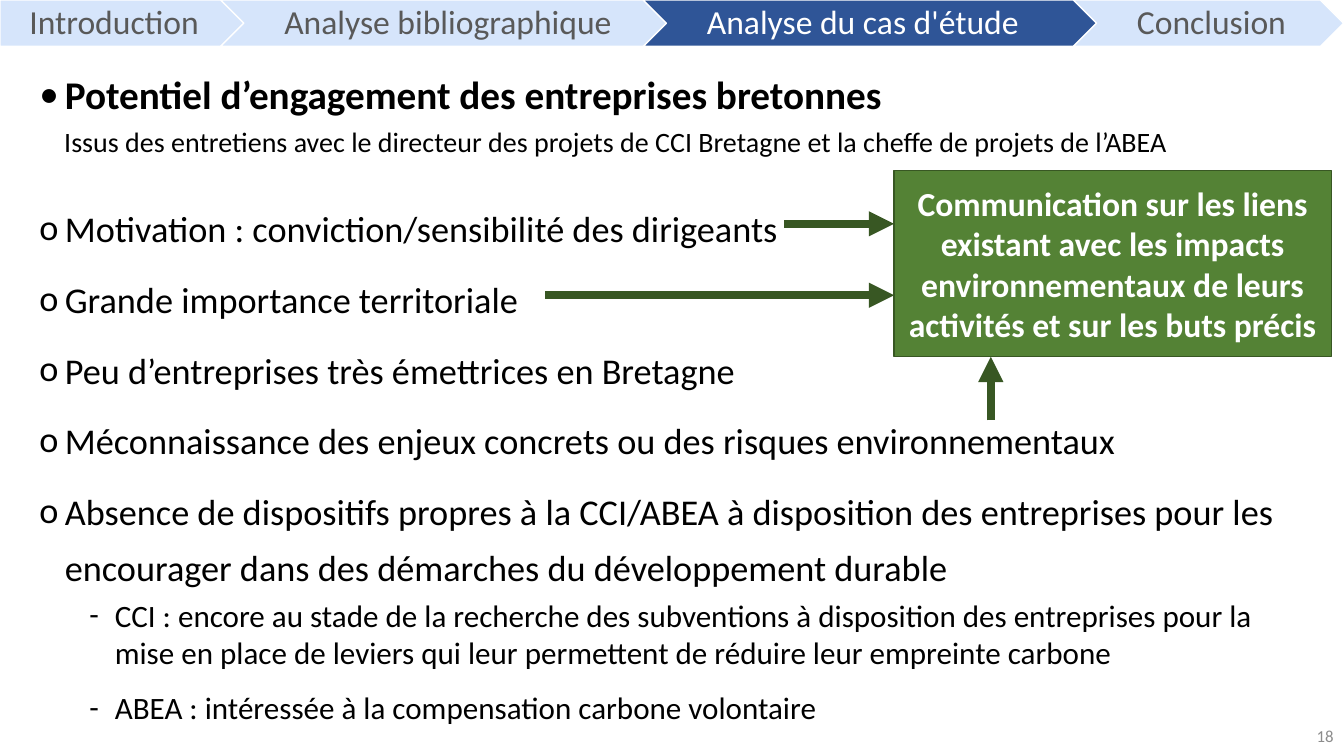
from lxml import etree
from pptx import Presentation
from pptx.dml.color import RGBColor
from pptx.enum.shapes import MSO_CONNECTOR, MSO_SHAPE
from pptx.enum.text import MSO_ANCHOR, MSO_AUTO_SIZE, PP_ALIGN
from pptx.oxml.ns import qn
from pptx.util import Cm, Pt

LEFT, MID, RIGHT = PP_ALIGN.LEFT, PP_ALIGN.CENTER, PP_ALIGN.RIGHT
TOP, CENTER = MSO_ANCHOR.TOP, MSO_ANCHOR.MIDDLE
RECT, PLATE, CHEVRON = MSO_SHAPE.RECTANGLE, MSO_SHAPE.PENTAGON, MSO_SHAPE.CHEVRON
STRAIGHT = MSO_CONNECTOR.STRAIGHT
FIXED = MSO_AUTO_SIZE.NONE

BLACK, WHITE, GREY, PALE = "000000", "FFFFFF", "595959", "8C8C8C"
LIGHT, NAVY, GREEN, DARK = "D6E5FB", "2F5597", "548235", "385723"


def color(code):
    return RGBColor.from_string(code)


def apply(target, values):
    for name, value in values.items():
        setattr(target, name, value)


class Deck:
    """Holds the style and the current slide."""

    font = "Calibri"
    hang = 0.64

    def __init__(self, width, height):
        self.prs = Presentation()
        apply(self.prs, {"slide_width": Cm(width), "slide_height": Cm(height)})
        self.slide = self.prs.slides.add_slide(self.prs.slide_layouts[1])

    def place(self, item, box):
        names = ("left", "top", "width", "height")
        apply(item, dict(zip(names, map(Cm, box))))

    def frame(self, item, anchor=TOP, **margins):
        frame = item.text_frame
        apply(frame, {"word_wrap": True, "auto_size": FIXED,
                      "vertical_anchor": anchor})
        apply(frame, {f"margin_{side}": Cm(gap) for side, gap in margins.items()})
        return frame

    def fill_in(self, para, text, size, tint=BLACK, bold=False, align=LEFT,
                lines=1.0, before=0, level=0):
        apply(para, {"alignment": align, "line_spacing": lines,
                     "space_before": Pt(before), "space_after": Pt(0),
                     "level": level})
        run = para.add_run()
        run.text = text
        apply(run.font, {"name": self.font, "size": Pt(size), "bold": bold})
        run.font.color.rgb = color(tint)

    def bullet(self, para, mark, left):
        props = para._p.get_or_add_pPr()
        props.set("marL", str(Cm(left)))
        props.set("indent", str(Cm(-self.hang)))
        etree.SubElement(props, qn("a:buFont")).set("typeface", self.font)
        etree.SubElement(props, qn("a:buChar")).set("char", mark)

    def title(self, box, text):
        item = self.slide.shapes.title
        self.place(item, box)
        para = self.frame(item).paragraphs[0]
        self.fill_in(para, text, 28, bold=True, lines=0.9, before=10)
        self.bullet(para, "•", self.hang)

    def body(self, box, rows):
        item = self.slide.placeholders[1]
        self.place(item, box)
        frame = self.frame(item)
        for spot, (level, lines, text) in enumerate(rows):
            para = frame.add_paragraph() if spot else frame.paragraphs[0]
            size, before, mark, left = ((25.9, 10, "o", self.hang),
                                        (22.2, 5, "-", 1.9))[level]
            self.fill_in(para, text, size, lines=lines, before=before, level=level)
            self.bullet(para, mark, left)

    def label(self, box, text, size, anchor=TOP, **style):
        item = self.slide.shapes.add_textbox(*map(Cm, box))
        self.fill_in(self.frame(item, anchor).paragraphs[0], text, size, **style)

    def shape(self, kind, box, text, fill, edge, host=None, margins=None, **style):
        item = (host or self.slide).shapes.add_shape(kind, *map(Cm, box))
        item.shadow.inherit = False
        item.fill.solid()
        item.fill.fore_color.rgb = color(fill)
        item.line.color.rgb = color(edge)
        item.line.width = Pt(1)
        para = self.frame(item, CENTER, **(margins or {})).paragraphs[0]
        self.fill_in(para, text, 24, **style)

    def arrow(self, *ends):
        item = self.slide.shapes.add_connector(STRAIGHT, *map(Cm, ends))
        item.line.color.rgb = color(DARK)
        item.line.width = Pt(6)
        props = item._element.spPr
        etree.SubElement(props.find(qn("a:ln")), qn("a:tailEnd")).set("type", "triangle")
        etree.SubElement(props, qn("a:effectLst"))

    def steps(self, height, rows):
        group = self.slide.shapes.add_group_shape()
        for kind, left, width, text, active, align, inset in rows:
            self.shape(kind, (left, 0, width, height), text,
                       NAVY if active else LIGHT, WHITE, host=group,
                       margins={"left": inset, "top": 0.18,
                                "right": 0.1, "bottom": 0.18},
                       tint=WHITE if active else GREY, align=align, lines=0.9)


def main():
    deck = Deck(33.87, 19.05)

    # Findings
    deck.body((0.74, 4.75, 32.26, 14.07), [
        (0, 1.3, "Motivation : conviction/sensibilité des dirigeants"),
        (0, 1.3, "Grande importance territoriale"),
        (0, 1.3, "Peu d’entreprises très émettrices en Bretagne"),
        (0, 1.3, "Méconnaissance des enjeux concrets ou des risques "
                 "environnementaux"),
        (0, 1.3, "Absence de dispositifs propres à la CCI/ABEA à disposition "
                 "des entreprises pour les encourager dans des démarches du "
                 "développement durable"),
        (1, 1.0, "CCI : encore au stade de la recherche des subventions à "
                 "disposition des entreprises pour la mise en place de leviers "
                 "qui leur permettent de réduire leur empreinte carbone"),
        (1, 1.3, "ABEA : intéressée à la compensation carbone volontaire"),
    ])

    # Heading, page number and origin of the findings
    deck.title((0.74, 1.78, 31.75, 1.42),
               "Potentiel d’engagement des entreprises bretonnes")
    deck.label((26.24, 18.03, 7.62, 1.02), "18", 12, CENTER,
               tint=PALE, align=RIGHT)
    deck.label((1.37, 3.1, 28.96, 1.02),
               "Issus des entretiens avec le directeur des projets de CCI "
               "Bretagne et la cheffe de projets de l’ABEA", 20, lines=0.9,
               before=10)

    # Message box and the arrows into it
    left, top, high = 22.53, 4.29, 4.7
    deck.shape(RECT, (left, top, 11.02, high),
               "Communication sur les liens existant avec les impacts "
               "environnementaux de leurs activités et sur les buts précis",
               GREEN, DARK, tint=WHITE, bold=True, align=MID)
    for start, y in ((19.76, 5.64), (13.74, 7.44)):
        deck.arrow(start, y, left, y)
    deck.arrow(24.97, 10.59, 24.97, top + high)

    # Progress bar
    deck.steps(1.17, [
        (PLATE, 0, 8.2, "Introduction", False, LEFT, 0.74),
        (CHEVRON, 5.56, 13.44, "Analyse bibliographique", False, LEFT, 1.02),
        (CHEVRON, 16.21, 13.44, "Analyse du cas d'étude", True, LEFT, 1.02),
        (CHEVRON, 27.05, 6.81, "Conclusion", False, MID, 0.25),
    ])

    deck.prs.save("out.pptx")


if __name__ == "__main__":
    main()
